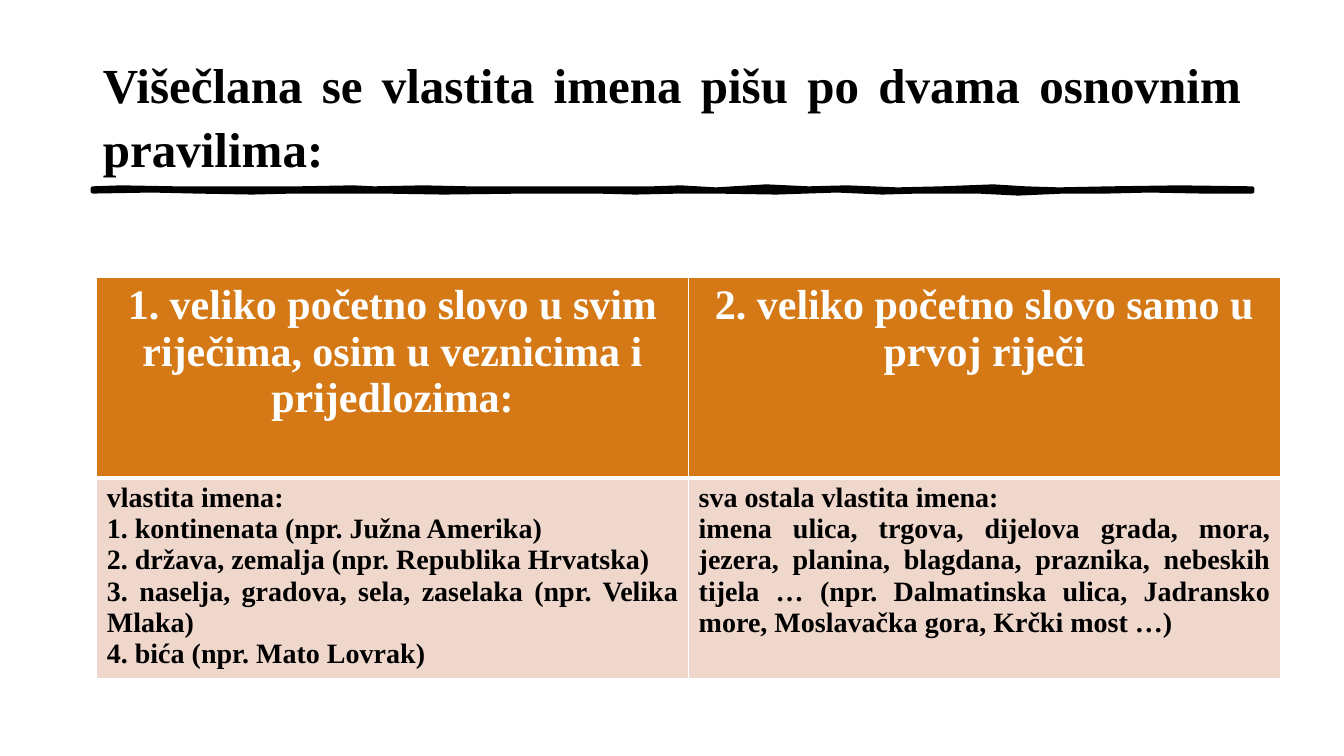
from lxml.etree import SubElement
from pptx import Presentation
from pptx.dml.color import RGBColor
from pptx.enum.text import MSO_ANCHOR, PP_ALIGN
from pptx.oxml.ns import qn
from pptx.util import Inches, Pt

# Content
TITLE = "Višečlana se vlastita imena pišu po dvama osnovnim pravilima:"
RULES = [
    {
        "heading": "1. veliko početno slovo u svim riječima, osim u veznicima i prijedlozima:",
        "details": [
            "vlastita imena:",
            "1. kontinenata (npr. Južna Amerika)",
            "2. država, zemalja (npr. Republika Hrvatska)",
            "3. naselja, gradova, sela, zaselaka (npr. Velika Mlaka)",
            "4. bića (npr. Mato Lovrak)",
        ],
    },
    {
        "heading": "2. veliko početno slovo samo u prvoj riječi",
        "details": [
            "sva ostala vlastita imena:",
            "imena ulica, trgova, dijelova grada, mora, jezera, planina, blagdana, "
            "praznika, nebeskih tijela … (npr. Dalmatinska ulica, Jadransko more, "
            "Moslavačka gora, Krčki most …)",
        ],
    },
]

# Hand-drawn underline: upper edge left to right, lower edge right to left
UPPER_EDGE = [
    (0.92, 1.87), (1.2, 1.86), (1.75, 1.87), (2.96, 1.87), (3.5, 1.86),
    (3.71, 1.87), (4.2, 1.86), (4.65, 1.87), (5.37, 1.87), (5.9, 1.87),
    (6.47, 1.87), (6.75, 1.86), (7.1, 1.88), (7.6, 1.85), (8.02, 1.87),
    (8.4, 1.86), (8.9, 1.88), (9.34, 1.87), (9.85, 1.85), (10.17, 1.87),
    (10.5, 1.88), (11.01, 1.87), (11.7, 1.86), (12.42, 1.87),
]
LOWER_EDGE = [
    (12.42, 1.9), (11.93, 1.9), (11.4, 1.89), (10.98, 1.9), (10.55, 1.9),
    (10.1, 1.92), (9.7, 1.9), (9.1, 1.9), (8.75, 1.91), (8.3, 1.89),
    (7.7, 1.91), (7.1, 1.9), (6.75, 1.9), (6.3, 1.91), (5.92, 1.9),
    (5.2, 1.9), (4.4, 1.91), (3.8, 1.9), (2.9, 1.9), (2.5, 1.91),
    (1.95, 1.9), (1.5, 1.89), (0.92, 1.9),
]

FONT = "Times New Roman"
BLACK, WHITE, ORANGE, PINK = "000000", "FFFFFF", "D57917", "EFD7CC"
TABLE_LEFT, TABLE_TOP = 0.96, 2.75
COLUMN_WIDTH, ROW_HEIGHT = 5.87, 1.99


def color(value):
    return RGBColor.from_string(value)


def write(frame, paragraphs, size, ink=BLACK, align=PP_ALIGN.JUSTIFY, spacing=None):
    for index, text in enumerate(paragraphs):
        paragraph = frame.paragraphs[0] if index == 0 else frame.add_paragraph()
        paragraph.alignment = align
        paragraph.line_spacing = spacing
        run = paragraph.add_run()
        run.text = text
        run.font.name = FONT
        run.font.size = Pt(size)
        run.font.bold = True
        run.font.color.rgb = color(ink)


def paint_cell(cell, fill, top, bottom):
    properties = cell._tc.get_or_add_tcPr()
    for side, width in (("L", 1), ("R", 1), ("T", top), ("B", bottom)):
        border = SubElement(properties, qn(f"a:ln{side}"), w=str(Pt(width)))
        SubElement(SubElement(border, qn("a:solidFill")), qn("a:srgbClr"), val=WHITE)
    cell.fill.solid()
    cell.fill.fore_color.rgb = color(fill)


deck = Presentation()
deck.slide_width, deck.slide_height = Inches(13.33), Inches(7.5)
slide = deck.slides.add_slide(deck.slide_layouts[5])

# Underline
start, *outline = [(Inches(x), Inches(y)) for x, y in UPPER_EDGE + LOWER_EDGE]
builder = slide.shapes.build_freeform(*start)
builder.add_line_segments(outline, close=True)
underline = builder.convert_to_shape()
underline.shadow.inherit = False
underline.fill.solid()
underline.fill.fore_color.rgb = color(BLACK)
underline.line.color.rgb = color(BLACK)
underline.line.width = Pt(3)

# Title
title = slide.shapes.title
title.left, title.top = Inches(0.92), Inches(0.4)
title.width, title.height = Inches(11.5), Inches(1.45)
title.text_frame.vertical_anchor = MSO_ANCHOR.MIDDLE
title.text_frame.word_wrap = True
write(title.text_frame, [TITLE], size=35, spacing=1.08)

# Table of the two rules, one column each
rules_table = slide.shapes.add_table(
    2, len(RULES), Inches(TABLE_LEFT), Inches(TABLE_TOP),
    Inches(COLUMN_WIDTH * len(RULES)), Inches(ROW_HEIGHT * 2),
).table
for column, rule in enumerate(RULES):
    heading, details = rules_table.cell(0, column), rules_table.cell(1, column)
    paint_cell(heading, ORANGE, top=1, bottom=3)
    paint_cell(details, PINK, top=3, bottom=1)
    write(heading.text_frame, [rule["heading"]], size=30, ink=WHITE, align=PP_ALIGN.CENTER)
    write(details.text_frame, rule["details"], size=20)

deck.save("out.pptx")
